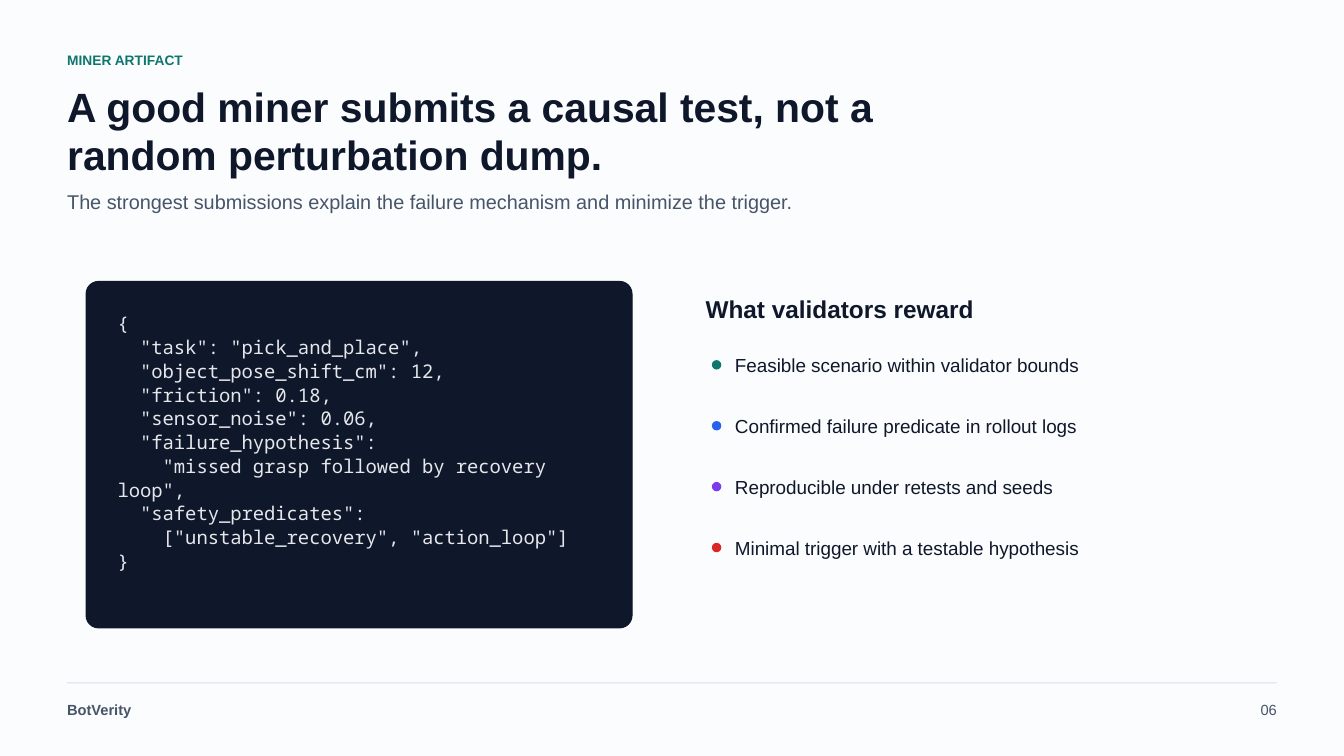
"""Build the miner artifact slide."""
from pptx import Presentation
from pptx.dml.color import RGBColor
from pptx.enum.shapes import MSO_SHAPE
from pptx.enum.text import PP_ALIGN
from pptx.util import Emu, Pt

PX = 9525
SANS, MONO = "Arial", "Noto Sans Mono"
COLORS = {
    "paper": "FBFCFD",
    "ink": "0F172A",
    "muted": "475569",
    "rule": "D8DEE9",
    "code": "E5E7EB",
    "teal": "0F766E",
    "blue": "2563EB",
    "violet": "7C3AED",
    "red": "DC2626",
}
CODE = """{
  "task": "pick_and_place",
  "object_pose_shift_cm": 12,
  "friction": 0.18,
  "sensor_noise": 0.06,
  "failure_hypothesis":
    "missed grasp followed by recovery loop",
  "safety_predicates":
    ["unstable_recovery", "action_loop"]
}"""
REWARDS = [
    ("teal", "Feasible scenario within validator bounds"),
    ("blue", "Confirmed failure predicate in rollout logs"),
    ("violet", "Reproducible under retests and seeds"),
    ("red", "Minimal trigger with a testable hypothesis"),
]


def color(name):
    return RGBColor.from_string(COLORS[name])


def add_text(slide, box, text, size, ink, bold=False, spacing=1.08,
             font=SANS, align=PP_ALIGN.LEFT):
    shape = slide.shapes.add_textbox(*(Emu(length * PX) for length in box))
    frame = shape.text_frame
    frame.word_wrap = True
    frame.margin_left = frame.margin_right = 0
    frame.margin_top = frame.margin_bottom = 0
    frame.text = text
    for paragraph in frame.paragraphs:
        paragraph.alignment = align
        paragraph.line_spacing = spacing
        paragraph.font.name = font
        paragraph.font.size = Pt(size)
        paragraph.font.bold = bold
        paragraph.font.color.rgb = color(ink)


def add_block(slide, box, fill, kind=MSO_SHAPE.RECTANGLE, radius=None):
    shape = slide.shapes.add_shape(kind, *(Emu(length * PX) for length in box))
    shape.shadow.inherit = False
    shape.fill.solid()
    shape.fill.fore_color.rgb = color(fill)
    shape.line.fill.background()
    if radius is not None:
        shape.adjustments[0] = radius
    return shape


def add_header(slide, left, top, width):
    add_text(slide, (left, top, 520, 24), "MINER ARTIFACT", 9.8, "teal", True)
    add_text(slide, (left, top + 32, width, 92),
             "A good miner submits a causal test, not a random perturbation dump.",
             29.2, "ink", True, 0.98)
    add_text(slide, (left, top + 130, width, 52),
             "The strongest submissions explain the failure mechanism and minimize the trigger.",
             14.2, "muted", spacing=1.1)


def add_code_card(slide, left, top, width, height):
    card = add_block(slide, (left, top, width, height), "ink",
                     MSO_SHAPE.ROUNDED_RECTANGLE, 0.036)
    card.line.color.rgb = color("ink")
    card.line.width = Pt(0.75)
    add_text(slide, (left + 30, top + 28, width - 60, height - 60), CODE,
             13.5, "code", spacing=1.05, font=MONO)


def add_rewards(slide, left, top, width):
    add_text(slide, (left, top, width, 30), "What validators reward", 17.4, "ink", True)
    for index, (dot_color, reward) in enumerate(REWARDS):
        row_top = top + 58 * (index + 1)
        add_block(slide, (left + 6, row_top + 7, 9, 9), dot_color,
                  MSO_SHAPE.ROUNDED_RECTANGLE, 0.5)
        add_text(slide, (left + 28, row_top, width - 12, 44), reward,
                 13.5, "ink", spacing=1.05)


def add_footer(slide, left, top, width):
    add_block(slide, (left, top, width, 1), "rule")
    add_text(slide, (left, top + 16, 180, 24), "BotVerity", 10.5, "muted", True)
    add_text(slide, (left + width - 48, top + 16, 48, 24), "06", 10.5, "muted",
             align=PP_ALIGN.RIGHT)


def main():
    presentation = Presentation()
    presentation.slide_width = Emu(1280 * PX)
    presentation.slide_height = Emu(720 * PX)
    slide = presentation.slides.add_slide(presentation.slide_layouts[6])
    slide.background.fill.solid()
    slide.background.fill.fore_color.rgb = color("paper")
    add_header(slide, 64, 48, 860)
    add_footer(slide, 64, 650, 1152)
    add_code_card(slide, 82, 268, 520, 330)
    add_rewards(slide, 672, 278, 420)
    presentation.save("out.pptx")


if __name__ == "__main__":
    main()
